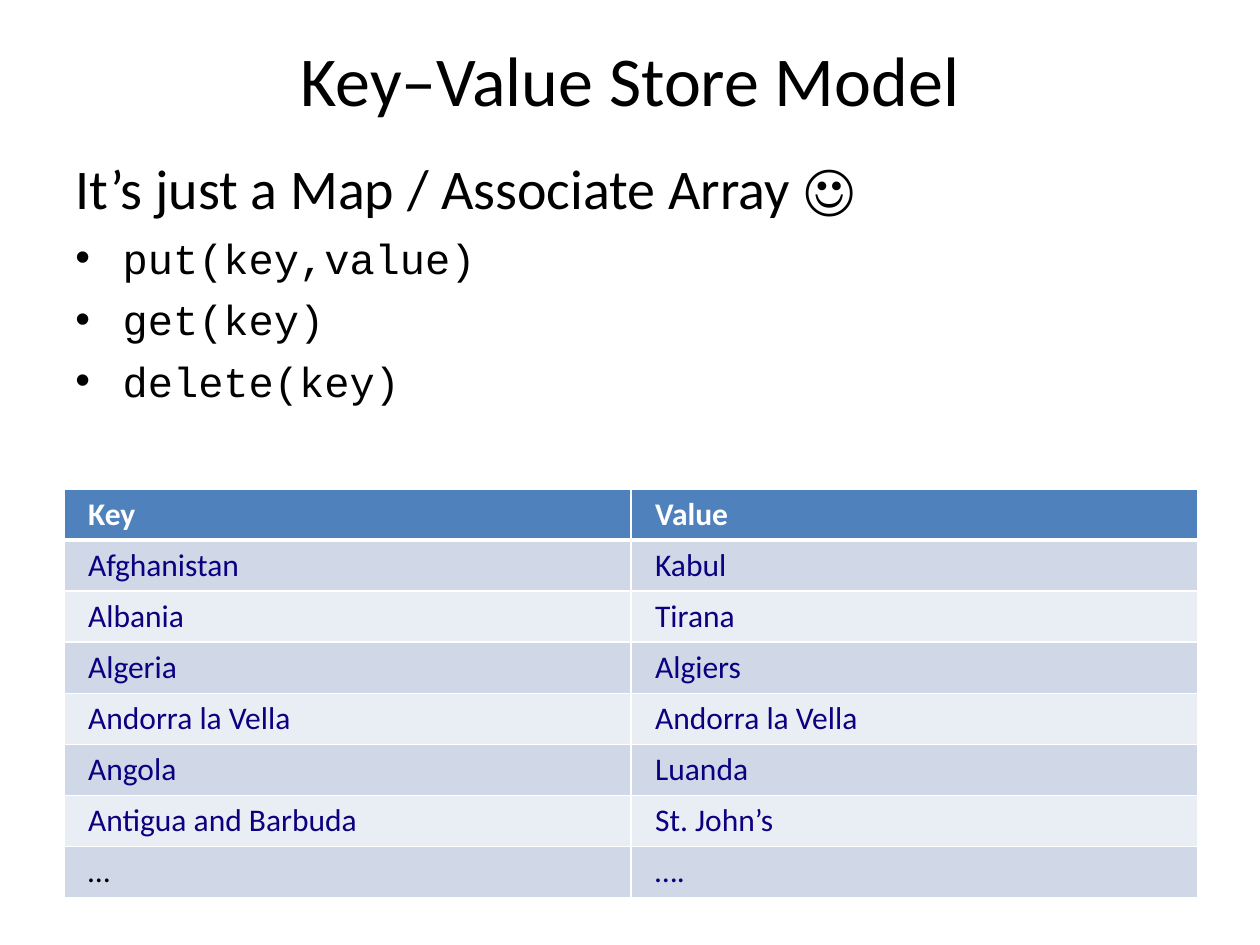
"""Build the key–value store slide with its operations and an example table."""
from dataclasses import dataclass
from typing import NamedTuple

from pptx import Presentation
from pptx import util as u
from pptx.dml.color import RGBColor
from pptx.enum import text as t
from pptx.oxml.ns import qn
from lxml import etree


@dataclass(frozen=True)
class Theme:
    """Fonts, colours and type sizes of the slide."""
    sans: str = "Calibri"
    mono: str = "Courier New"
    bullet: str = "Arial"
    ink: str = "000000"
    white: str = "FFFFFF"
    navy: str = "0B0080"
    header: str = "4F81BD"
    bands: tuple[str, str] = ("D0D8E8", "E9EDF4")
    title_size: float = 40
    lead_size: float = 32
    code_size: float = 24
    cell_size: float = 18


class Box(NamedTuple):
    """Left, top, width and height in points."""
    left: float
    top: float
    width: float
    height: float


class Entry(NamedTuple):
    """One key with its value."""
    key: str
    value: str


THEME = Theme()
TITLE_BOX = Box(36, 0, 648, 90)
BODY_BOX = Box(36, 84.24, 648, 383.76)
TABLE_BOX = Box(36.72, 279.36, 648, 232.8)
OPERATIONS = ("put(key,value)", "get(key)", "delete(key)")
HEADING = Entry("Key", "Value")
ENTRIES = (
    Entry("Afghanistan", "Kabul"),
    Entry("Albania", "Tirana"),
    Entry("Algeria", "Algiers"),
    Entry("Andorra la Vella", "Andorra la Vella"),
    Entry("Angola", "Luanda"),
    Entry("Antigua and Barbuda", "St. John’s"),
    Entry("…", "…."),
)


def points(box: Box) -> list[u.Length]:
    """Convert a box to lengths."""
    return [u.Pt(side) for side in box]


def write(paragraph, wording: str, *, size: float, font: str = THEME.sans,
          color: str = THEME.ink, bold: bool = False, before: float = 0,
          align: t.PP_ALIGN = t.PP_ALIGN.LEFT) -> None:
    """Write one formatted run into a paragraph."""
    paragraph.alignment = align
    paragraph.space_before = u.Pt(before)
    run = paragraph.add_run()
    run.text = wording
    run.font.name = font
    run.font.size = u.Pt(size)
    run.font.bold = bold
    run.font.color.rgb = RGBColor.from_string(color)


def add_bullet(paragraph, indent: float = 27) -> None:
    """Give a paragraph a hanging bullet."""
    properties = paragraph._p.get_or_add_pPr()
    properties.set("marL", str(u.Pt(indent)))
    properties.set("indent", str(u.Pt(-indent)))
    etree.SubElement(properties, qn("a:buFont"), typeface=THEME.bullet)
    etree.SubElement(properties, qn("a:buChar"), char="•")


def add_borders(cell, bottom: float) -> None:
    """Draw white lines around a cell."""
    properties = cell._tc.get_or_add_tcPr()
    for side, width in {"L": 1, "R": 1, "T": 1, "B": bottom}.items():
        line = etree.SubElement(properties, qn(f"a:ln{side}"), w=str(u.Pt(width)))
        fill = etree.SubElement(line, qn("a:solidFill"))
        etree.SubElement(fill, qn("a:srgbClr"), val=THEME.white)


def fill_cell(cell, wording: str, row: int) -> None:
    """Format and write one table cell."""
    heading = row == 0
    add_borders(cell, bottom=3 if heading else 1)
    cell.fill.solid()
    cell.fill.fore_color.rgb = RGBColor.from_string(
        THEME.header if heading else THEME.bands[(row - 1) % 2])
    cell.margin_left = cell.margin_right = u.Pt(13.68)
    cell.margin_top = cell.margin_bottom = u.Pt(3.6)
    cell.vertical_anchor = t.MSO_ANCHOR.TOP if heading else t.MSO_ANCHOR.MIDDLE
    color = THEME.white if heading else THEME.ink if wording == "…" else THEME.navy
    write(cell.text_frame.paragraphs[0], wording, size=THEME.cell_size,
          color=color, bold=heading)


def add_title(slide) -> None:
    """Place and write the title."""
    title = slide.shapes.title
    title.left, title.top, title.width, title.height = points(TITLE_BOX)
    title.text_frame.vertical_anchor = t.MSO_ANCHOR.MIDDLE
    write(title.text_frame.paragraphs[0], "Key–Value Store Model",
          size=THEME.title_size, align=t.PP_ALIGN.CENTER)


def add_entries(slide) -> None:
    """Add the table of keys and values."""
    rows = (HEADING, *ENTRIES)
    table = slide.shapes.add_table(len(rows), len(HEADING), *points(TABLE_BOX)).table
    for row, entry in enumerate(rows):
        table.rows[row].height = u.Pt(TABLE_BOX.height / len(rows))
        for column, wording in enumerate(entry):
            fill_cell(table.cell(row, column), wording, row)


def add_operations(slide) -> None:
    """Add the lead sentence and the bulleted operations."""
    body = slide.shapes.add_textbox(*points(BODY_BOX)).text_frame
    body.word_wrap = True
    write(body.paragraphs[0], "It’s just a Map / Associate Array ☺",
          size=THEME.lead_size, before=6.4)
    for operation in OPERATIONS:
        paragraph = body.add_paragraph()
        write(paragraph, operation, size=THEME.code_size, font=THEME.mono, before=6.4)
        add_bullet(paragraph)


def main() -> None:
    """Build and save the presentation."""
    deck = Presentation()
    deck.slide_width, deck.slide_height = u.Pt(720), u.Pt(540)
    slide = deck.slides.add_slide(deck.slide_layouts[5])
    add_title(slide)
    add_entries(slide)
    add_operations(slide)
    deck.save("out.pptx")


if __name__ == "__main__":
    main()
